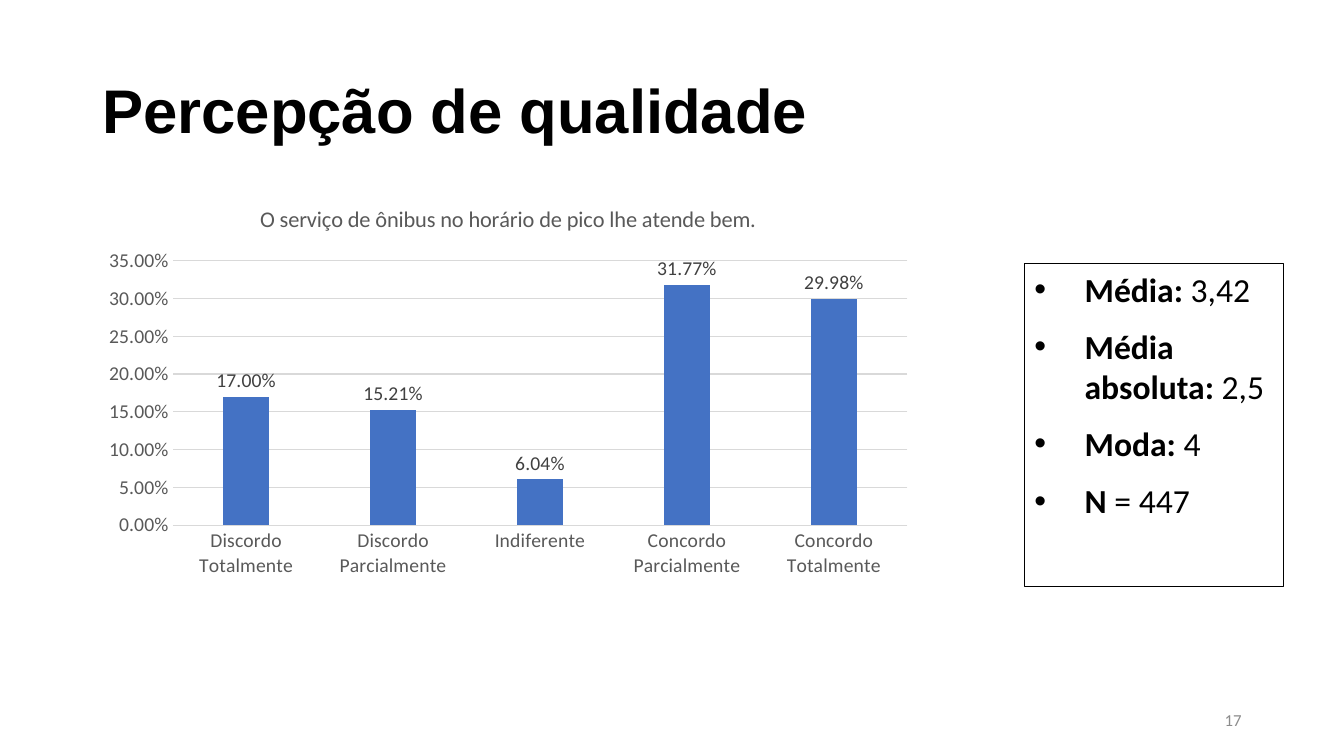
from lxml import etree
from pptx import Presentation
from pptx import util as u
from pptx.chart.data import CategoryChartData
from pptx.dml.color import RGBColor
from pptx.enum import chart as charts, shapes, text
from pptx.oxml.ns import qn

BLACK = RGBColor(0x00, 0x00, 0x00)
PAGE_GRAY = RGBColor(0x8C, 0x8C, 0x8C)
AXIS_GRAY = RGBColor(0x59, 0x59, 0x59)
LABEL_GRAY = RGBColor(0x40, 0x40, 0x40)
GRID_GRAY = RGBColor(0xD9, 0xD9, 0xD9)
BAR_BLUE = RGBColor(0x44, 0x72, 0xC4)

COLUMNS, ROWS = 160, 90
PERCENT = "0.00%"

QUESTION = "O serviço de ônibus no horário de pico lhe atende bem."
ANSWERS = {
    "Discordo Totalmente": 0.17,
    "Discordo Parcialmente": 0.1521,
    "Indiferente": 0.0604,
    "Concordo Parcialmente": 0.3177,
    "Concordo Totalmente": 0.2998,
}
STATISTICS = [("Média:", " 3,42"), ("Média absoluta:", " 2,5"),
              ("Moda:", " 4"), ("N", " = 447")]


class SurveySlide:
    """Holds the style and the current slide, placed on a 160 by 90 grid."""

    heading_font, body_font = "Arial", "Calibri"

    def __init__(self, deck):
        self.column = deck.slide_width / COLUMNS
        self.row = deck.slide_height / ROWS
        self.slide = deck.slides.add_slide(deck.slide_layouts[6])

    def place(self, left, top, width, height):
        return (round(left * self.column), round(top * self.row),
                round(width * self.column), round(height * self.row))

    def style(self, font, size, color, name=None, bold=False):
        font.name = name or self.body_font
        font.size = u.Pt(size)
        font.bold = bold
        font.color.rgb = color

    def text_line(self, words, area, size, color, name=None, bold=False,
                  align=text.PP_ALIGN.LEFT):
        frame = self.slide.shapes.add_textbox(*self.place(*area)).text_frame
        frame.word_wrap = True
        frame.vertical_anchor = text.MSO_ANCHOR.MIDDLE
        line = frame.paragraphs[0]
        line.text = words
        line.alignment = align
        line.line_spacing = 0.9
        self.style(line.font, size, color, name, bold)

    def bullet_box(self, items, area, size):
        box = self.slide.shapes.add_shape(
            shapes.MSO_SHAPE.RECTANGLE, *self.place(*area))
        box.shadow.inherit = False
        box.fill.background()
        box.line.color.rgb = BLACK
        box.line.width = u.Pt(0.75)
        frame = box.text_frame
        frame.word_wrap = True
        frame.vertical_anchor = text.MSO_ANCHOR.TOP
        for index, (label, value) in enumerate(items):
            item = frame.add_paragraph() if index else frame.paragraphs[0]
            item.alignment = text.PP_ALIGN.LEFT
            item.space_after = u.Pt(12)
            # Hanging bullet
            properties = item._p.get_or_add_pPr()
            properties.set("marL", str(u.Inches(0.5)))
            properties.set("indent", str(-u.Inches(0.5)))
            etree.SubElement(properties, qn("a:buFont")).set("typeface", "Arial")
            etree.SubElement(properties, qn("a:buChar")).set("char", "•")
            self.style(item.font, size, BLACK)
            for words, bold in ((label, True), (value, False)):
                run = item.add_run()
                run.text = words
                run.font.bold = bold

    def column_chart(self, title, answers, area):
        data = CategoryChartData(number_format=PERCENT)
        data.categories = list(answers)
        data.add_series("Series 1", list(answers.values()))
        chart = self.slide.shapes.add_chart(
            charts.XL_CHART_TYPE.COLUMN_CLUSTERED, *self.place(*area), data).chart
        self.style(chart.font, 14, BLACK)
        chart.has_legend = False
        chart.has_title = True
        chart.chart_title.include_in_layout = False
        heading = chart.chart_title.text_frame.paragraphs[0]
        heading.text = title
        self.style(heading.font, 16, AXIS_GRAY)

        # Axes
        answer_axis, share_axis = chart.category_axis, chart.value_axis
        for axis in (answer_axis, share_axis):
            axis.major_tick_mark = axis.minor_tick_mark = charts.XL_TICK_MARK.NONE
            self.style(axis.tick_labels.font, 14, AXIS_GRAY)
        share_axis.minimum_scale, share_axis.maximum_scale = 0, 0.35
        share_axis.major_unit = 0.05
        share_axis.tick_labels.number_format = PERCENT
        share_axis.tick_labels.number_format_is_linked = False
        share_axis.format.line.fill.background()
        for line in (answer_axis.format.line, share_axis.major_gridlines.format.line):
            line.color.rgb = GRID_GRAY
            line.width = u.Pt(0.75)

        # Columns and their labels
        plot = chart.plots[0]
        plot.vary_by_categories = False
        plot.gap_width, plot.overlap = 219, -27
        bars = plot.series[0]
        bars.format.fill.solid()
        bars.format.fill.fore_color.rgb = BAR_BLUE
        labels = bars.data_labels
        labels.show_value = True
        labels.position = charts.XL_LABEL_POSITION.OUTSIDE_END
        labels.number_format = PERCENT
        labels.number_format_is_linked = False
        self.style(labels.font, 14, LABEL_GRAY)


def main():
    deck = Presentation()
    deck.slide_width, deck.slide_height = u.Inches(13.33), u.Inches(7.5)
    survey = SurveySlide(deck)

    # Heading and page number
    survey.text_line("Percepção de qualidade", (11, 4.8, 138, 17.4), 44, BLACK,
                     name=survey.heading_font, bold=True)
    survey.text_line("17", (113, 83.4, 36, 4.8), 12, PAGE_GRAY,
                     align=text.PP_ALIGN.RIGHT)

    # Summary statistics and answers
    survey.bullet_box(STATISTICS, (121.95, 31.4, 30.85, 38.4), 24)
    survey.column_chart(QUESTION, ANSWERS, (11, 22.2, 99, 47.5))

    deck.save("out.pptx")


if __name__ == "__main__":
    main()
